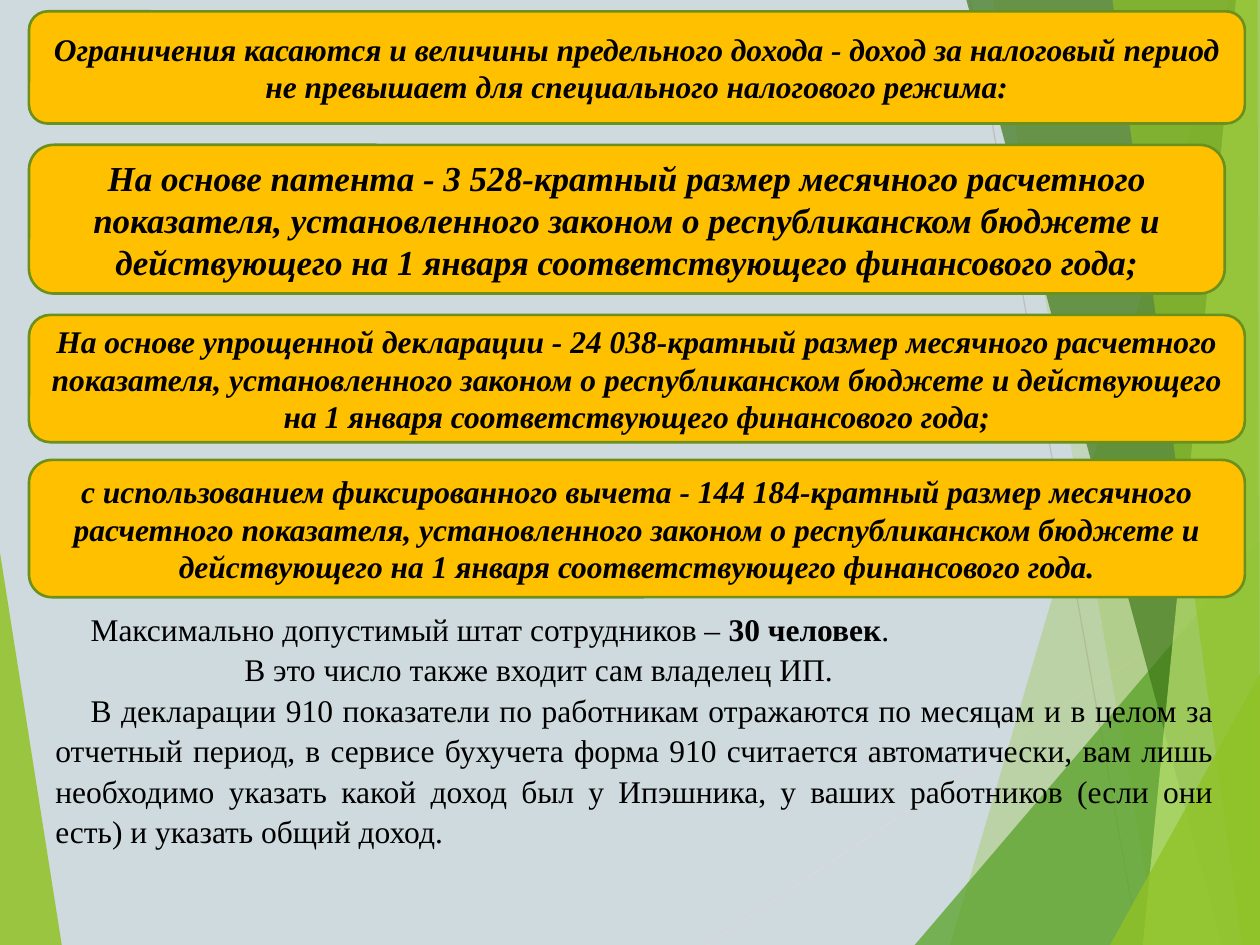
from lxml.etree import SubElement
from pptx import Presentation
from pptx.dml.color import RGBColor
from pptx.enum.shapes import MSO_CONNECTOR as Connector, MSO_SHAPE as Shape
from pptx.enum.text import MSO_ANCHOR as Anchor, PP_ALIGN as Align
from pptx.oxml.ns import qn
from pptx.util import Inches, Pt

deck = Presentation()
deck.slide_width, deck.slide_height = Inches(10), Inches(7.5)
# Positions are percentages of the slide's width and height
COL, ROW = deck.slide_width / 100, deck.slide_height / 100
page = deck.slides.add_slide(deck.slide_layouts[6])


def paint(fill, color):
    fill.solid()
    fill.fore_color.rgb = RGBColor.from_string(color)


def write(para, text, size=18, bold=False, italic=False, align=Align.JUSTIFY):
    para.alignment = align
    span = para.add_run()
    span.text = text
    font = span.font
    font.name, font.size, font.bold, font.italic = "Times New Roman", Pt(size), bold, italic
    paint(font.fill, "000000")


# Background
paint(page.background.fill, "CFDADF")

# Thin rays behind the facets
rays = [
    ("D9D9D9", 56.1, 100, 100, 60.9),
    ("BFBFBF", 77, 0, 90.4, 100),
]
for color, x1, y1, x2, y2 in rays:
    ray = page.shapes.add_connector(
        Connector.STRAIGHT, int(x1 * COL), int(y1 * ROW), int(x2 * COL), int(y2 * ROW))
    paint(ray.line.fill, color)
    ray.line.width = Pt(0.75)
    SubElement(ray._element.spPr, qn("a:effectLst"))

# Translucent green facets: colour, opacity in percent, corners
facets = [
    ("90C226", 85, [(0, 58.5), (4.9, 100), (0, 100)]),
    ("90C226", 30, [(97.5, 0), (75.4, 100), (100, 100), (100, 0)]),
    ("90C226", 20, [(78.8, 0), (91.9, 100), (100, 100), (100, 0)]),
    ("54A021", 72, [(72.6, 100), (100, 57.2), (100, 100)]),
    ("3F7819", 70, [(76.7, 0), (97, 100), (100, 100), (100, 0)]),
    ("C0E474", 70, [(98.1, 0), (90.7, 100), (100, 100), (100, 0)]),
    ("90C226", 65, [(88.3, 0), (98.6, 100), (100, 100), (99.8, 0)]),
    ("90C226", 80, [(88.1, 100), (100, 71.3), (100, 100)]),
]
for color, opacity, corners in facets:
    points = [(int(x * COL), int(y * ROW)) for x, y in corners]
    outline = page.shapes.build_freeform(*points[0])
    outline.add_line_segments(points[1:])
    facet = outline.convert_to_shape()
    facet.shadow.inherit = False
    facet.line.fill.background()
    paint(facet.fill, color)
    tint = facet._element.spPr.find(qn("a:solidFill")).find(qn("a:srgbClr"))
    SubElement(tint, qn("a:alpha")).set("val", str(opacity * 1000))

# Income limits: top, height, width, text size, text
TAIL = ("-кратный размер месячного расчетного показателя, установленного законом о "
        "республиканском бюджете и действующего на 1 января соответствующего финансового года")
limits = [
    (1.2, 11.87, 96.5, 18, "Ограничения касаются и величины предельного дохода - доход за "
                           "налоговый период не превышает для специального налогового режима:"),
    (15.33, 15.73, 94.9, 20, f"На основе патента - 3 528{TAIL};"),
    (33.33, 13.47, 96.5, 18, f"На основе упрощенной декларации - 24 038{TAIL};"),
    (48.67, 14.53, 96.5, 18, f"с использованием фиксированного вычета - 144 184{TAIL}."),
]
for top, height, width, size, text in limits:
    box = page.shapes.add_shape(
        Shape.ROUNDED_RECTANGLE,
        int(2.3 * COL), int(top * ROW), int(width * COL), int(height * ROW))
    box.shadow.inherit = False
    paint(box.fill, "FFC000")
    paint(box.line.fill, "6B901C")
    box.line.width = Pt(1.5)
    box.text_frame.word_wrap = True
    box.text_frame.vertical_anchor = Anchor.MIDDLE
    write(box.text_frame.paragraphs[0], text, size=size, bold=True, italic=True,
          align=Align.CENTER)

# Notes on staff: first-line indent, then (text, bold) pieces
notes = [
    (2.8, [("Максимально допустимый штат сотрудников – ", False),
           ("30 человек", True), (".", False)]),
    (15, [("В это число также входит сам владелец ИП.", False)]),
    (2.8, [("В декларации 910 показатели по работникам отражаются по месяцам и в целом за "
            "отчетный период, в сервисе бухучета форма 910 считается автоматически, вам лишь "
            "необходимо указать какой доход был у Ипэшника, у ваших работников (если они есть) "
            "и указать общий доход.", False)]),
]
staff = page.shapes.add_textbox(
    int(3.4 * COL), int(63.6 * ROW), int(93.9 * COL), int(31.6 * ROW)).text_frame
staff.word_wrap = True
for number, (indent, pieces) in enumerate(notes):
    para = staff.add_paragraph() if number else staff.paragraphs[0]
    para.line_spacing = 1.07
    for text, bold in pieces:
        write(para, text, bold=bold)
    para._p.get_or_add_pPr().set("indent", str(int(indent * COL)))

deck.save("out.pptx")
